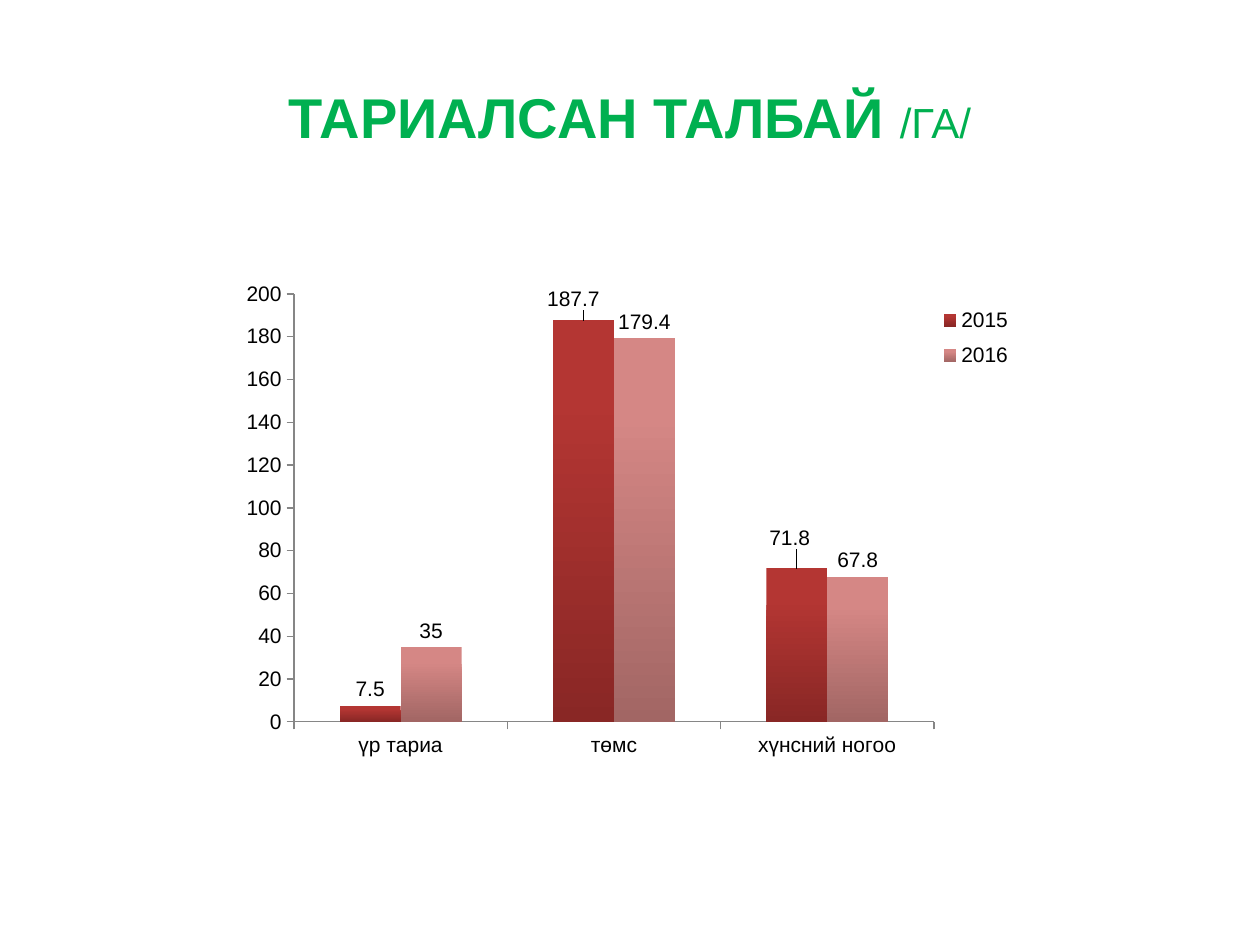
import pptx
import pptx.chart.data
import pptx.dml.color
import pptx.enum.chart
import pptx.enum.text
import pptx.oxml
import pptx.oxml.ns
import pptx.util

RGB = pptx.dml.color.RGBColor
GREEN = RGB(0x00, 0xB0, 0x50)
BLACK = RGB(0, 0, 0)
AXIS_GRAY = RGB(0x86, 0x86, 0x86)
FONT = "Arial"

# Content
TITLE = [("ТАРИАЛСАН ТАЛБАЙ ", 32, True), ("/ГА/", 24, False)]
CROPS = ["үр тариа", "төмс", "хүнсний ногоо"]
# name, values, bar colours from top to bottom, label shifts in px by point
SERIES = [
    ("2015", [7.5, 187.7, 71.8], (RGB(0xB4, 0x36, 0x33), RGB(0x89, 0x27, 0x25)),
     {1: (-10, -5), 2: (-7, -14)}),
    ("2016", [35, 179.4, 67.8], (RGB(0xD5, 0x87, 0x85), RGB(0xA2, 0x66, 0x64)), {}),
]

# Places in px: left, top, width, height
PX = 914400 // 126
TITLE_BOX = (63, 38, 1134, 157)
CHART_BOX = (231, 273, 809, 494)
PLOT_BOX = (294, 294, 640, 428)
LEGEND_BOX = (938, 296, 76, 84)


def emu(box):
    return [v * PX for v in box]


def set_font(font, size=12, color=BLACK, bold=False):
    font.name, font.size, font.bold = FONT, pptx.util.Pt(size), bold
    font.color.rgb = color


def add_text(p, text, **fmt):
    r = p.add_run()
    r.text = text
    set_font(r.font, **fmt)


def layout(x, y, w=None, h=None, inner=False, edge=True):
    """Manual chart layout from px, as fractions of the chart."""
    tags = []
    if inner:
        tags.append('<c:layoutTarget val="inner"/>')
    if edge:
        tags.append('<c:xMode val="edge"/><c:yMode val="edge"/>')
    sizes = zip("xywh", (x, y, w, h), CHART_BOX[2:] * 2)
    tags += [f'<c:{k} val="{v / full:.4f}"/>' for k, v, full in sizes if v is not None]
    return pptx.oxml.parse_xml(
        f'<c:layout {pptx.oxml.ns.nsdecls("c")}><c:manualLayout>'
        f'{"".join(tags)}</c:manualLayout></c:layout>')


def place(parent, index, new):
    for old in parent.findall(pptx.oxml.ns.qn("c:layout")):
        parent.remove(old)
    parent.insert(index, new)


def inside_chart(box):
    return box[0] - CHART_BOX[0], box[1] - CHART_BOX[1], box[2], box[3]


prs = pptx.Presentation()
prs.slide_width, prs.slide_height = pptx.util.Inches(10), pptx.util.Inches(7.5)
s = prs.slides.add_slide(prs.slide_layouts[5])

# Title
title = s.shapes.title
title.left, title.top, title.width, title.height = emu(TITLE_BOX)
tf = title.text_frame
tf.vertical_anchor = pptx.enum.text.MSO_ANCHOR.MIDDLE
p = tf.paragraphs[0]
p.alignment = pptx.enum.text.PP_ALIGN.CENTER
for text, size, bold in TITLE:
    add_text(p, text, size=size, color=GREEN, bold=bold)

# Chart
data = pptx.chart.data.CategoryChartData()
data.categories = CROPS
for name, values, _, _ in SERIES:
    data.add_series(name, values)
chart = s.shapes.add_chart(pptx.enum.chart.XL_CHART_TYPE.COLUMN_CLUSTERED,
                           *emu(CHART_BOX), data).chart
set_font(chart.font)
chart.has_title = False
plot = chart.plots[0]
plot.gap_width, plot.overlap, plot.vary_by_categories = 150, 0, False
plot_area = chart.element.find(".//" + pptx.oxml.ns.qn("c:plotArea"))
place(plot_area, 0, layout(*inside_chart(PLOT_BOX), inner=True))

# Axes
for axis in (chart.category_axis, chart.value_axis):
    axis.has_major_gridlines = False
    axis.major_tick_mark = pptx.enum.chart.XL_TICK_MARK.OUTSIDE
    axis.minor_tick_mark = pptx.enum.chart.XL_TICK_MARK.NONE
    axis.format.line.color.rgb = AXIS_GRAY
    axis.format.line.width = pptx.util.Pt(0.75)
    set_font(axis.tick_labels.font)
axis.minimum_scale, axis.maximum_scale, axis.major_unit = 0, 200, 20

# Legend
chart.has_legend = True
legend = chart.legend
legend.position = pptx.enum.chart.XL_LEGEND_POSITION.RIGHT
legend.include_in_layout = False
set_font(legend.font)
place(chart.element.find(".//" + pptx.oxml.ns.qn("c:legend")), 1,
      layout(*inside_chart(LEGEND_BOX)))

# Bars and their labels
OUTSIDE_END = pptx.enum.chart.XL_LABEL_POSITION.OUTSIDE_END
for series, (_, _, colors, shifts) in zip(plot.series, SERIES):
    fill = series.format.fill
    fill.gradient()
    fill.gradient_angle = 270
    for stop, color, position in zip(fill.gradient_stops, colors, (0.2, 1)):
        stop.color.rgb, stop.position = color, position
    labels = series.data_labels
    labels.show_value = True
    labels.position = OUTSIDE_END
    set_font(labels.font)
    for i, (dx, dy) in shifts.items():
        label = series.points[i].data_label
        set_font(label.font)
        label.position = OUTSIDE_END
    for d in labels._element.findall(pptx.oxml.ns.qn("c:dLbl")):
        dx, dy = shifts[d.idx.val]
        place(d, 1, layout(dx, dy, edge=False))

prs.save("out.pptx")
